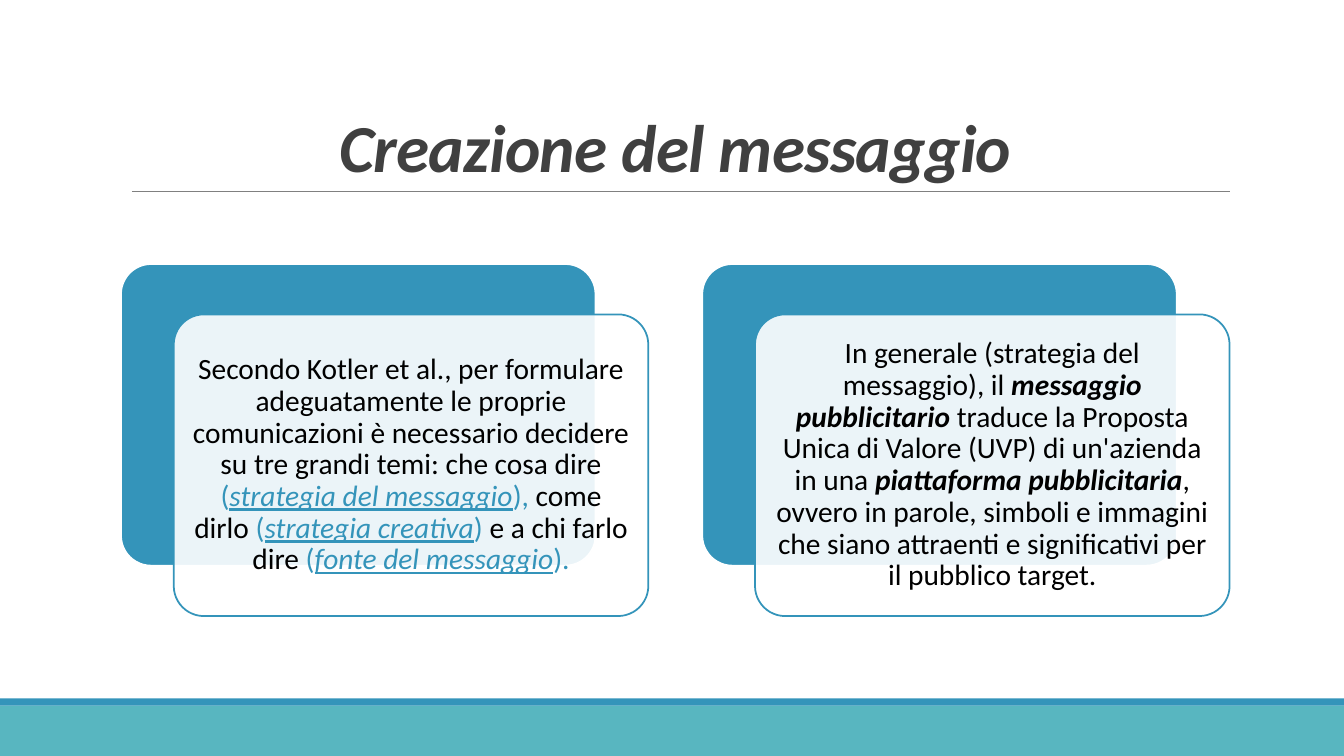
"""Build the slide "Creazione del messaggio" with two layered text cards."""
import pptx
import pptx.dml.color
import pptx.enum.shapes
import pptx.enum.text
import pptx.oxml.ns
import pptx.util
from lxml import etree

Pt = pptx.util.Pt
RGB = pptx.dml.color.RGBColor
SHAPE = pptx.enum.shapes.MSO_SHAPE
ANCHOR = pptx.enum.text.MSO_ANCHOR
qn = pptx.oxml.ns.qn

BLUE = RGB(0x34, 0x94, 0xBA)
TEAL = RGB(0x58, 0xB6, 0xC0)
GREY = RGB(0x80, 0x80, 0x80)
DARK = RGB(0x40, 0x40, 0x40)
BLACK = RGB(0, 0, 0)
WHITE = RGB(0xFF, 0xFF, 0xFF)

FONT = "Calibri"
PLAIN = {}
ACCENT = {"color": BLUE}
THEME = {"color": BLUE, "italic": True, "underline": True}
STRONG = {"bold": True, "italic": True}

CARD_LEFT, CARD_TOP, CARD_PITCH = 86.4, 188.6, 415.2
CARD_W, CARD_H = 339, 215.5
SHIFT_X, SHIFT_Y = 37.7, 36

CARDS = [
    [
        ("Secondo Kotler et al., per formulare adeguatamente le proprie "
         "comunicazioni è necessario decidere su tre grandi temi: "
         "che cosa dire ", PLAIN),
        ("(", ACCENT), ("strategia del messaggio", THEME), ("), ", ACCENT),
        ("come dirlo ", PLAIN),
        ("(", ACCENT), ("strategia creativa", THEME), (") ", ACCENT),
        ("e a chi farlo dire ", PLAIN),
        ("(", ACCENT), ("fonte del messaggio", THEME), (").", ACCENT),
    ],
    [
        ("In generale (strategia del messaggio), il ", PLAIN),
        ("messaggio pubblicitario", STRONG),
        (" traduce la Proposta Unica di Valore (UVP) di un'azienda in una ",
         PLAIN),
        ("piattaforma pubblicitaria", STRONG),
        (", ovvero in parole, simboli e immagini che siano attraenti e "
         "significativi per il pubblico target.", PLAIN),
    ],
]


def add_run(p, text, size=21, color=BLACK, bold=False, italic=False,
            underline=False, spacing=None):
    r = p.add_run()
    r.text = text
    f = r.font
    f.name, f.size = FONT, Pt(size)
    f.bold, f.italic, f.underline = bold, italic, underline
    f.color.rgb = color
    if spacing is not None:
        r._r.get_or_add_rPr().set("spc", str(round(spacing * 100)))


def set_frame(tf, anchor, line_spacing, inset):
    tf.word_wrap = True
    tf.auto_size = pptx.enum.text.MSO_AUTO_SIZE.NONE
    tf.vertical_anchor = anchor
    tf.margin_left = tf.margin_right = Pt(inset)
    tf.margin_top = tf.margin_bottom = Pt(inset)
    p = tf.paragraphs[0]
    p.alignment = pptx.enum.text.PP_ALIGN.CENTER
    p.line_spacing = line_spacing
    return p


def add_box(s, kind, x, y, w, h, fill, line=None, opacity=100):
    sp = s.shapes.add_shape(kind, Pt(x), Pt(y), Pt(w), Pt(h))
    sp.shadow.inherit = False
    sp.fill.solid()
    sp.fill.fore_color.rgb = fill
    if opacity < 100:
        clr = sp.fill._xPr.find(qn("a:solidFill"))[0]
        etree.SubElement(clr, qn("a:alpha")).set("val", str(opacity * 1000))
    if line is None:
        sp.line.fill.background()
    else:
        sp.line.color.rgb = line
        sp.line.width = Pt(1.25)
    if kind == SHAPE.ROUNDED_RECTANGLE:
        sp.adjustments[0] = 0.1
    return sp


def add_rule(s, x1, x2, y):
    ln = s.shapes.add_connector(pptx.enum.shapes.MSO_CONNECTOR.STRAIGHT,
                                Pt(x1), Pt(y), Pt(x2), Pt(y))
    ln.line.color.rgb = GREY
    ln.line.width = Pt(0.5)
    etree.SubElement(ln._element.spPr, qn("a:effectLst"))


def set_title(s, text):
    sp = s.shapes.title
    sp.left, sp.top, sp.width, sp.height = Pt(86.4), Pt(22.6), Pt(792), Pt(114.2)
    p = set_frame(sp.text_frame, ANCHOR.BOTTOM, 0.85, 3.6)
    add_run(p, text, size=48, color=DARK, bold=True, italic=True, spacing=-0.5)


def add_card(s, x, y, runs):
    add_box(s, SHAPE.ROUNDED_RECTANGLE, x, y, CARD_W, CARD_H, BLUE, WHITE)
    front = add_box(s, SHAPE.ROUNDED_RECTANGLE, x + SHIFT_X, y + SHIFT_Y,
                    CARD_W, CARD_H, WHITE, BLUE, opacity=90)
    p = set_frame(front.text_frame, ANCHOR.MIDDLE, 0.9, 6.3)
    for text, style in runs:
        add_run(p, text, **style)


def main():
    prs = pptx.Presentation()
    prs.slide_width, prs.slide_height = Pt(960), Pt(540)
    s = prs.slides.add_slide(prs.slide_layouts[5])
    add_box(s, SHAPE.RECTANGLE, 0, 504, 960, 36, TEAL)
    add_box(s, SHAPE.RECTANGLE, 0, 498.8, 960, 5.2, BLUE)
    add_rule(s, 94.3, 878.8, 136.8)
    set_title(s, "Creazione del messaggio")
    for i, runs in enumerate(CARDS):
        add_card(s, CARD_LEFT + i * CARD_PITCH, CARD_TOP, runs)
    prs.save("out.pptx")


if __name__ == "__main__":
    main()
